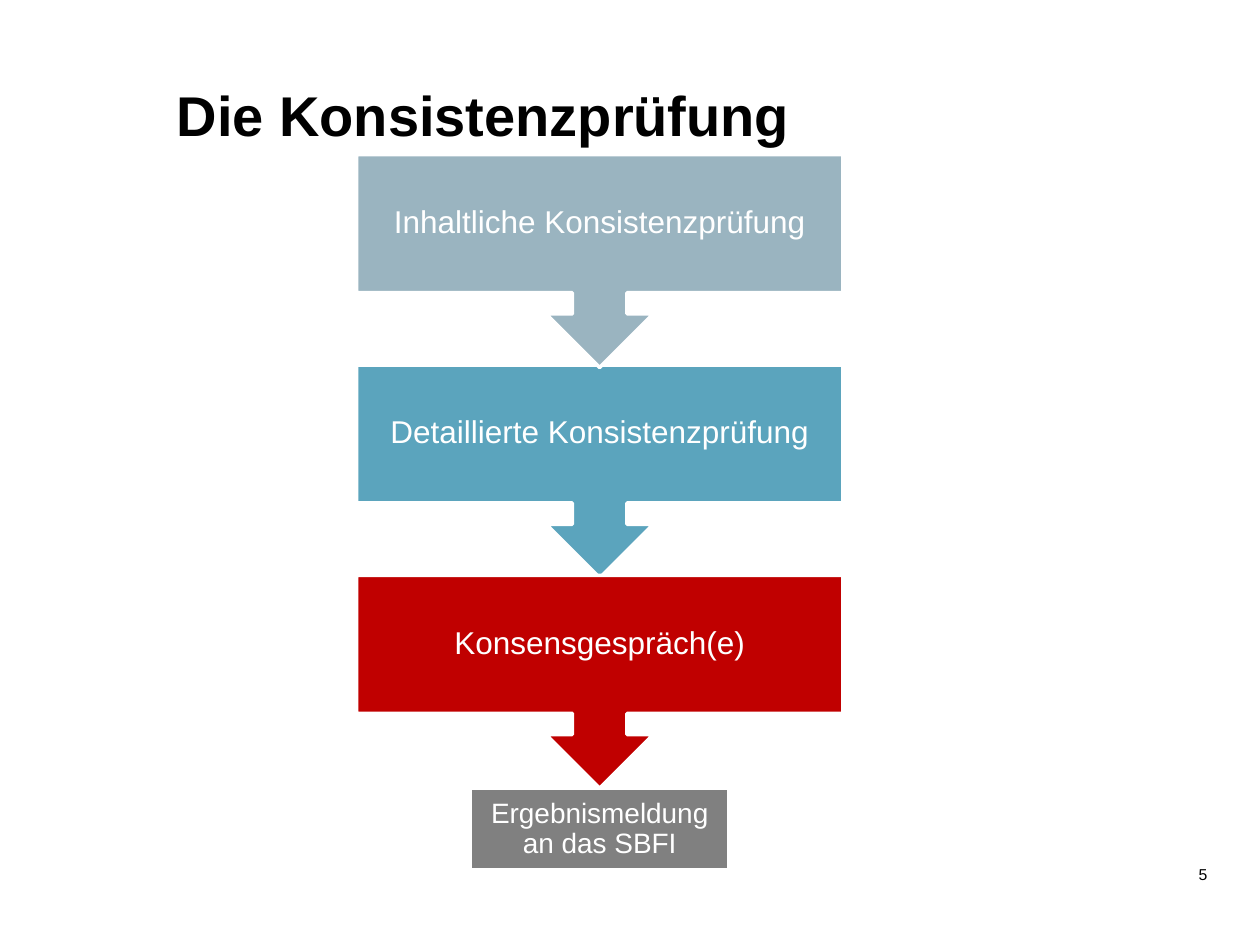
from pptx import Presentation
from pptx.dml.color import RGBColor
from pptx.enum.shapes import MSO_SHAPE as Preset
from pptx.enum.text import MSO_ANCHOR as Anchor, MSO_AUTO_SIZE as AutoSize, PP_ALIGN as Align
from pptx.util import Cm, Pt

COLORS = {
    "black": "000000",
    "white": "FFFFFF",
    "content": "9AB4C0",
    "detail": "5BA4BD",
    "consensus": "C00000",
    "result": "808080",
}

CENTER = 12.09
STEP_TOP, STEP_PITCH = 3.12, 4.24
STEP_HALF_WIDTH, STEP_HEIGHT = 4.9, 2.78
SHAFT_HALF_WIDTH, SHAFT_BOTTOM = 0.55, 3.21
HEAD_HALF_WIDTH, TIP = 1.08, 4.29

# Position in the flow, text and colour, from back to front
STEPS = [
    (1, "Detaillierte Konsistenzprüfung", "detail"),
    (0, "Inhaltliche Konsistenzprüfung", "content"),
    (2, "Konsensgespräch(e)", "consensus"),
]


def set_attributes(target, values):
    for name, value in values.items():
        setattr(target, name, value)


class SlideBuilder:
    font_name = "Arial"

    def __init__(self, slide):
        self.slide = slide

    def add_text(self, shape, text, size, color, margins, anchor, bold=False, **paragraph_format):
        """Fill a shape with one paragraph; margins run left, top, right, bottom in cm."""
        frame = shape.text_frame
        frame.text = text
        left, top, right, bottom = map(Cm, margins)
        set_attributes(frame, {
            "word_wrap": True,
            "auto_size": AutoSize.NONE,
            "vertical_anchor": anchor,
            "margin_left": left,
            "margin_top": top,
            "margin_right": right,
            "margin_bottom": bottom,
        })
        paragraph = frame.paragraphs[0]
        set_attributes(paragraph, paragraph_format)
        font = paragraph.runs[0].font
        set_attributes(font, {"name": self.font_name, "size": Pt(size), "bold": bold})
        font.color.rgb = RGBColor.from_string(COLORS[color])

    def paint(self, shape, color):
        shape.shadow.inherit = False
        shape.fill.solid()
        shape.fill.fore_color.rgb = RGBColor.from_string(COLORS[color])
        shape.line.color.rgb = RGBColor.from_string(COLORS["white"])
        shape.line.width = Pt(2)

    def title(self, text, left, top, width, height):
        title = self.slide.shapes.title
        set_attributes(title, {
            "left": Cm(left), "top": Cm(top), "width": Cm(width), "height": Cm(height),
        })
        self.add_text(title, text, 32, "black", (0.18, 0.23, 0.18, 0.13), Anchor.TOP,
                      bold=True, alignment=Align.LEFT)

    def page_number(self, text, left, top, width, height):
        box = self.slide.shapes.add_textbox(Cm(left), Cm(top), Cm(width), Cm(height))
        self.add_text(box, text, 9, "black", (0.25, 0.13, 0.25, 0.13), Anchor.TOP,
                      alignment=Align.RIGHT, line_spacing=Pt(12))

    def result_box(self, text, top, width, height):
        box = self.slide.shapes.add_shape(
            Preset.RECTANGLE, Cm(CENTER - width / 2), Cm(top), Cm(width), Cm(height))
        self.paint(box, "result")
        self.add_text(box, text, 16, "white", (0.18,) * 4, Anchor.MIDDLE,
                      alignment=Align.CENTER, line_spacing=0.9)

    def step(self, position, text, color):
        """Draw a box whose bottom edge runs out into a down arrow."""
        top = STEP_TOP + position * STEP_PITCH
        right_half = [
            (STEP_HALF_WIDTH, 0),
            (STEP_HALF_WIDTH, STEP_HEIGHT),
            (SHAFT_HALF_WIDTH, STEP_HEIGHT),
            (SHAFT_HALF_WIDTH, SHAFT_BOTTOM),
            (HEAD_HALF_WIDTH, SHAFT_BOTTOM),
        ]
        left_half = [(-x, y) for x, y in reversed(right_half)]
        outline = [(Cm(CENTER + x), Cm(top + y))
                   for x, y in [*right_half, (0, TIP), *left_half]]
        builder = self.slide.shapes.build_freeform(*outline[0])
        builder.add_line_segments(outline[1:], close=True)
        shape = builder.convert_to_shape()
        self.paint(shape, color)
        self.add_text(shape, text, 18, "white", (0.3, 0.3, 0.3, 1.83), Anchor.MIDDLE,
                      alignment=Align.CENTER, line_spacing=0.9)


def main():
    presentation = Presentation()
    presentation.slide_width, presentation.slide_height = Cm(25.4), Cm(19.05)
    slide = presentation.slides.add_slide(presentation.slide_layouts[0])
    subtitle = slide.placeholders[1].element
    subtitle.getparent().remove(subtitle)

    builder = SlideBuilder(slide)
    builder.title("Die Konsistenzprüfung", 3.38, 1.4, 17.48, 1.98)
    builder.page_number("5", 18.39, 17.27, 6.2, 1.02)
    builder.result_box("Ergebnismeldung an das SBFI", 15.89, 5.21, 1.65)
    for position, text, color in STEPS:
        builder.step(position, text, color)

    presentation.save("out.pptx")


if __name__ == "__main__":
    main()
